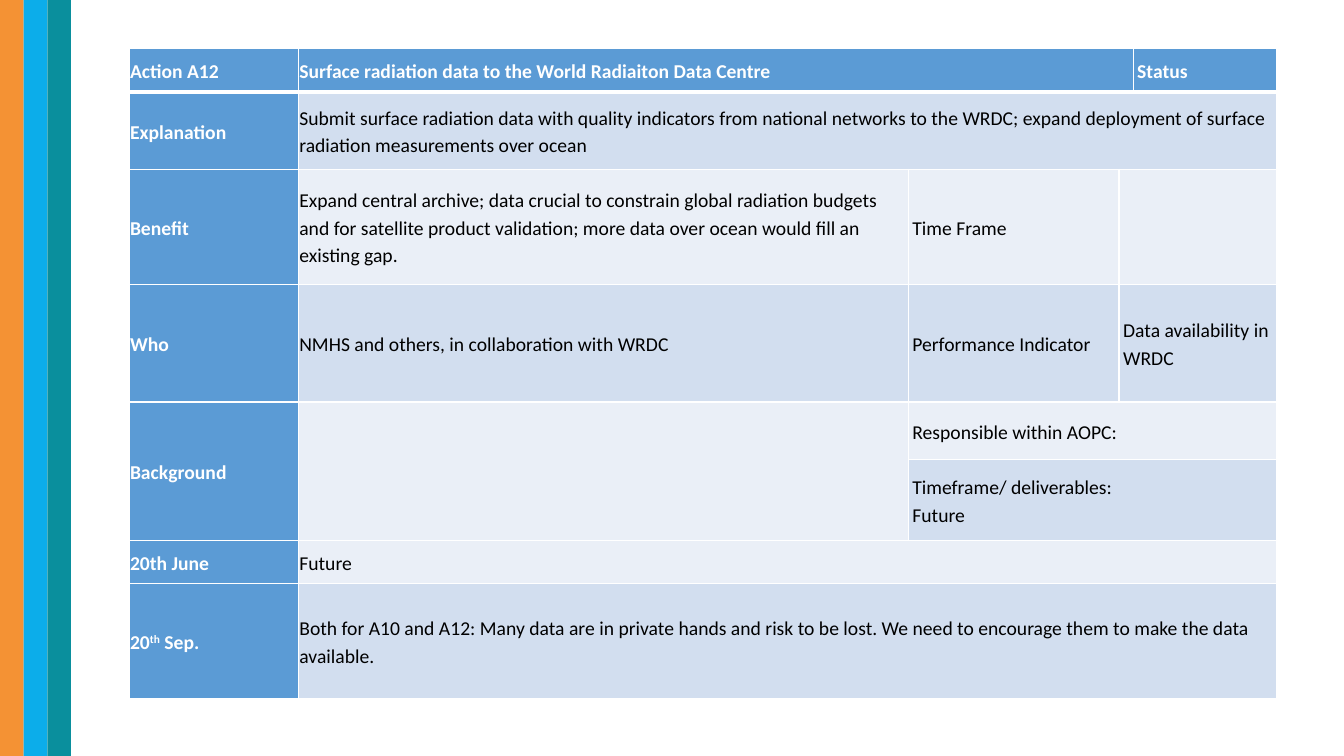
"""Build the Action A12 status slide."""
from dataclasses import dataclass

import lxml.etree
import pptx
import pptx.dml.color
import pptx.enum.shapes
import pptx.enum.text
import pptx.oxml.ns
import pptx.util

RGB = pptx.dml.color.RGBColor
ORANGE = RGB(0xF4, 0x92, 0x34)
SKY = RGB(0x0C, 0xAD, 0xEA)
TEAL = RGB(0x0A, 0x8F, 0x9D)
BLUE = RGB(0x5B, 0x9B, 0xD5)
BAND_DARK = RGB(0xD2, 0xDE, 0xEF)
BAND_LIGHT = RGB(0xEA, 0xEF, 0xF7)
WHITE = RGB(0xFF, 0xFF, 0xFF)
BLACK = RGB(0x00, 0x00, 0x00)

SLIDE_W = pptx.util.Inches(13.33)
SLIDE_H = pptx.util.Inches(7.5)
STRIPE_W = 1.76
TABLE_LEFT, TABLE_TOP = 9.6, 6.4
COLS = (12.6, 45.39, 15.68, 1.05, 10.65)
ROWS = (5.73, 10.27, 15.2, 15.6, 7.6, 10.67, 5.73, 15.2)


@dataclass(frozen=True)
class Entry:
    """A table cell; text between carets is superscript."""
    row: int
    col: int
    text: str = ""
    rows: int = 1
    cols: int = 1


ENTRIES = (
    Entry(0, 0, "Action A12"),
    Entry(0, 1, "Surface radiation data to the World Radiaiton Data Centre", cols=3),
    Entry(0, 4, "Status"),
    Entry(1, 0, "Explanation"),
    Entry(1, 1, "Submit surface radiation data with quality indicators from national "
                "networks to the WRDC; expand deployment of surface radiation "
                "measurements over ocean", cols=4),
    Entry(2, 0, "Benefit"),
    Entry(2, 1, "Expand central archive; data crucial to constrain global radiation "
                "budgets and for satellite product validation; more data over ocean "
                "would fill an existing gap."),
    Entry(2, 2, "Time Frame"),
    Entry(2, 3, cols=2),
    Entry(3, 0, "Who"),
    Entry(3, 1, "NMHS and others, in collaboration with WRDC"),
    Entry(3, 2, "Performance Indicator"),
    Entry(3, 3, "Data availability in WRDC", cols=2),
    Entry(4, 0, "Background", rows=2),
    Entry(4, 1, rows=2),
    Entry(4, 2, "Responsible within AOPC:", cols=3),
    Entry(5, 2, "Timeframe/ deliverables:\nFuture", cols=3),
    Entry(6, 0, "20th June"),
    Entry(6, 1, "Future", cols=4),
    Entry(7, 0, "20^th^ Sep."),
    Entry(7, 1, "Both for A10 and A12: Many data are in private hands and risk to be "
                "lost. We need to encourage them to make the data available.", cols=4),
)


def across(share: float) -> int:
    """Return a percentage of the slide's width."""
    return round(SLIDE_W * share / 100)


def down(share: float) -> int:
    """Return a percentage of the slide's height."""
    return round(SLIDE_H * share / 100)


def is_heading(row: int, col: int) -> bool:
    """Tell whether a cell lies in the heading row or column."""
    return row == 0 or col == 0


def draw_stripe(s, index: int, color: RGB) -> None:
    """Draw one full-height stripe at the left edge."""
    sp = s.shapes.add_shape(pptx.enum.shapes.MSO_SHAPE.RECTANGLE,
                            across(index * STRIPE_W), 0, across(STRIPE_W), SLIDE_H)
    sp.shadow.inherit = False
    sp.fill.solid()
    sp.fill.fore_color.rgb = color
    sp.line.fill.background()


def style_cell(cell, row: int, col: int) -> None:
    """Set the fill, white borders, anchor and insets of a cell."""
    band = BAND_DARK if row % 2 else BAND_LIGHT
    cell.fill.solid()
    cell.fill.fore_color.rgb = BLUE if is_heading(row, col) else band
    cell.vertical_anchor = pptx.enum.text.MSO_ANCHOR.MIDDLE
    side, edge = (0.01, 0.01) if col < 2 else (0.04, 0.02)
    cell.margin_left = cell.margin_right = pptx.util.Inches(side)
    cell.margin_top = cell.margin_bottom = pptx.util.Inches(edge)
    qn = pptx.oxml.ns.qn
    tcPr = cell._tc.get_or_add_tcPr()
    for i, name in enumerate(("lnL", "lnR", "lnT", "lnB")):
        thick = (row, name) in ((0, "lnB"), (1, "lnT"))
        ln = lxml.etree.Element(qn(f"a:{name}"), w=str(pptx.util.Pt(3 if thick else 1)))
        fill = lxml.etree.SubElement(ln, qn("a:solidFill"))
        lxml.etree.SubElement(fill, qn("a:srgbClr"), val=str(WHITE))
        tcPr.insert(i, ln)


def write_cell(cell, entry: Entry) -> None:
    """Write an entry's paragraphs and format their runs."""
    heading = is_heading(entry.row, entry.col)
    tf = cell.text_frame
    tf.text = entry.text.replace("^", "")
    for p, line in zip(tf.paragraphs, entry.text.split("\n")):
        p.line_spacing = 1.15
        parts = line.split("^")
        p.text = parts[0]
        for part in parts[1:]:
            p.add_run().text = part
        for i, r in enumerate(p.runs):
            r.font.name = "Calibri"
            r.font.size = pptx.util.Pt(14)
            r.font.bold = heading
            r.font.color.rgb = WHITE if heading else BLACK
            if i % 2:
                r._r.get_or_add_rPr().set("baseline", "30000")


def draw_table(s) -> None:
    """Draw the action table with its merged cells."""
    table = s.shapes.add_table(len(ROWS), len(COLS), across(TABLE_LEFT), down(TABLE_TOP),
                               across(sum(COLS)), down(sum(ROWS))).table
    for column, share in zip(table.columns, COLS):
        column.width = across(share)
    for i, share in enumerate(ROWS):
        table.rows[i].height = down(share)
        for j in range(len(COLS)):
            style_cell(table.cell(i, j), i, j)
    for entry in ENTRIES:
        cell = table.cell(entry.row, entry.col)
        if entry.rows * entry.cols > 1:
            cell.merge(table.cell(entry.row + entry.rows - 1, entry.col + entry.cols - 1))
        if entry.text:
            write_cell(cell, entry)


def main() -> None:
    """Build and save the slide."""
    prs = pptx.Presentation()
    prs.slide_width, prs.slide_height = SLIDE_W, SLIDE_H
    s = prs.slides.add_slide(prs.slide_layouts[6])
    for i, color in enumerate((ORANGE, SKY, TEAL)):
        draw_stripe(s, i, color)
    draw_table(s)
    prs.save("out.pptx")


if __name__ == "__main__":
    main()
